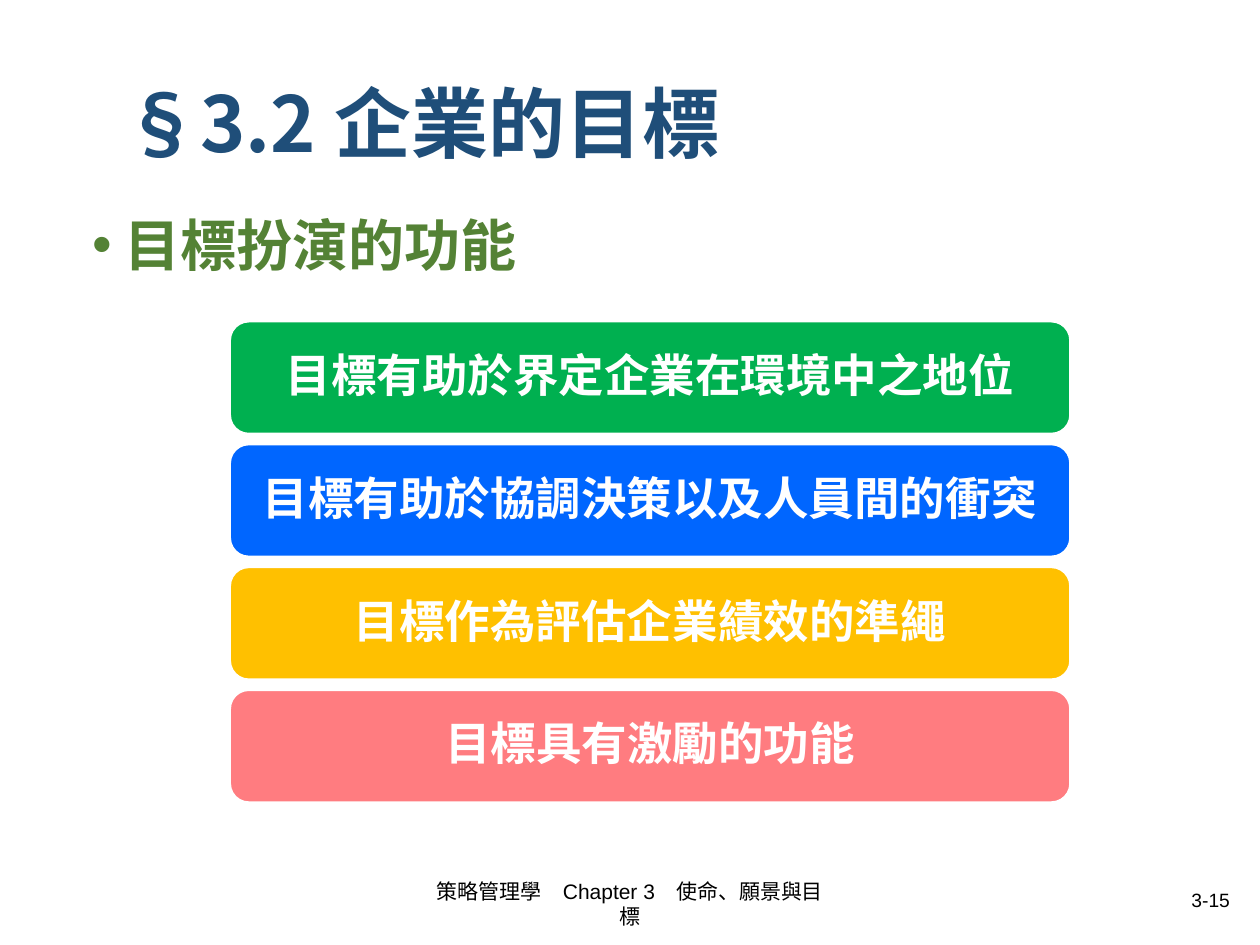
from lxml import etree
from pptx import Presentation
from pptx.dml.color import RGBColor
from pptx.enum.shapes import MSO_SHAPE
from pptx.enum.text import MSO_ANCHOR as ANCHOR, PP_ALIGN as ALIGN
from pptx.oxml.ns import qn
from pptx.util import Pt

NAVY = RGBColor(0x1F, 0x4E, 0x79)
OLIVE = RGBColor(0x54, 0x82, 0x35)
GREEN = RGBColor(0x00, 0xB0, 0x50)
BLUE = RGBColor(0x00, 0x66, 0xFF)
AMBER = RGBColor(0xFF, 0xC0, 0x00)
PINK = RGBColor(0xFF, 0x7C, 0x80)
WHITE = RGBColor(0xFF, 0xFF, 0xFF)
BLACK = RGBColor(0x00, 0x00, 0x00)
CJK = "Noto Sans CJK SC"


def add_run(p, text, size, color, font=CJK, bold=True):
    r = p.add_run()
    r.text = text
    r.font.name = font
    r.font.size = Pt(size)
    r.font.bold = bold
    r.font.color.rgb = color
    if font == CJK:
        ea = etree.SubElement(r.font._element, qn("a:ea"))
        ea.set("typeface", CJK)


def add_text_box(left, top, width, height, anchor, align):
    """Add a wrapping text box and return its first paragraph."""
    tf = s.shapes.add_textbox(Pt(left), Pt(top), Pt(width), Pt(height)).text_frame
    tf.word_wrap = True
    tf.vertical_anchor = anchor
    p = tf.paragraphs[0]
    p.alignment = align
    return p


prs = Presentation()
prs.slide_width, prs.slide_height = Pt(720), Pt(540)
s = prs.slides.add_slide(prs.slide_layouts[6])

# Footer and page number
p = add_text_box(238.5, 502, 243, 28.75, ANCHOR.MIDDLE, ALIGN.CENTER)
add_run(p, "策略管理學　Chapter 3　使命、願景與目標", 12, BLACK, "Arial", False)
p = add_text_box(508.5, 503.5, 201.5, 21.5, ANCHOR.MIDDLE, ALIGN.RIGHT)
add_run(p, "3-15", 11, BLACK, "Arial", False)

# Title
p = add_text_box(63.5, 43.5, 598.5, 59, ANCHOR.MIDDLE, ALIGN.LEFT)
p.line_spacing = 0.9
add_run(p, "§3.2 企業的目標", 44, NAVY)

# Bulleted heading
p = add_text_box(46, 116.5, 598.5, 356.5, ANCHOR.TOP, ALIGN.LEFT)
pPr = p._p.get_or_add_pPr()
pPr.set("marL", str(Pt(18)))
pPr.set("indent", str(Pt(-18)))
etree.SubElement(pPr, qn("a:buFont")).set("typeface", "Arial")
etree.SubElement(pPr, qn("a:buChar")).set("char", "•")
add_run(p, "目標扮演的功能", 32, OLIVE)

# Stacked function bars
BAR_TOP, BAR_HEIGHT, BAR_PITCH = 183.8, 64, 70.2
bars = [
    ("目標有助於界定企業在環境中之地位", GREEN),
    ("目標有助於協調決策以及人員間的衝突", BLUE),
    ("目標作為評估企業績效的準繩", AMBER),
    ("目標具有激勵的功能", PINK),
]
for i, (text, color) in enumerate(bars):
    sp = s.shapes.add_shape(MSO_SHAPE.ROUNDED_RECTANGLE, Pt(131.5),
                            Pt(BAR_TOP + i * BAR_PITCH), Pt(480), Pt(BAR_HEIGHT))
    sp.shadow.inherit = False
    sp.fill.solid()
    sp.fill.fore_color.rgb = color
    sp.line.color.rgb = WHITE
    sp.line.width = Pt(1)
    tf = sp.text_frame
    tf.word_wrap = True
    tf.vertical_anchor = ANCHOR.MIDDLE
    tf.margin_left = tf.margin_right = tf.margin_top = tf.margin_bottom = Pt(8)
    p = tf.paragraphs[0]
    p.alignment = ALIGN.CENTER
    p.line_spacing = 0.9
    p.space_after = Pt(9)
    add_run(p, text, 26, WHITE)

prs.save("out.pptx")
